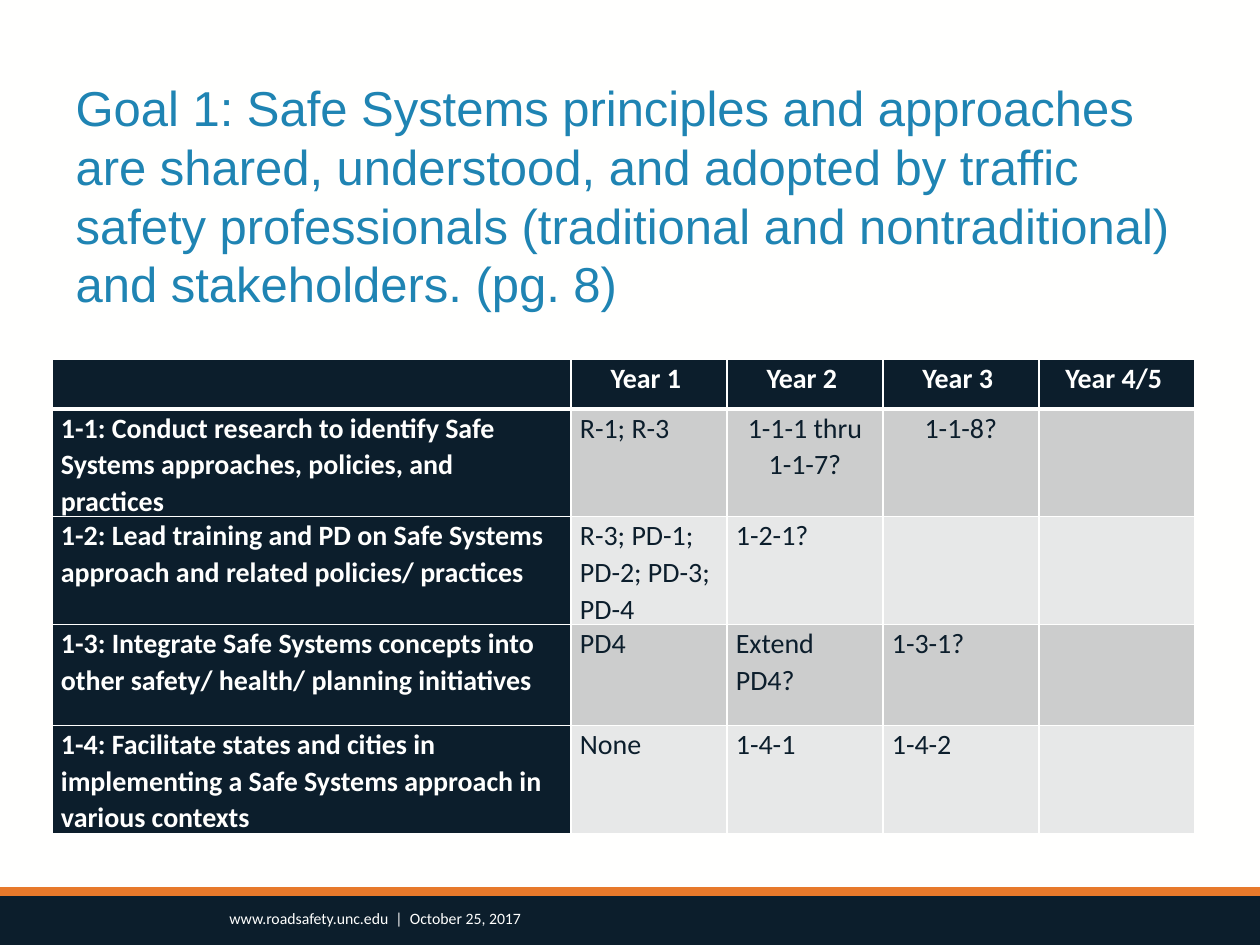
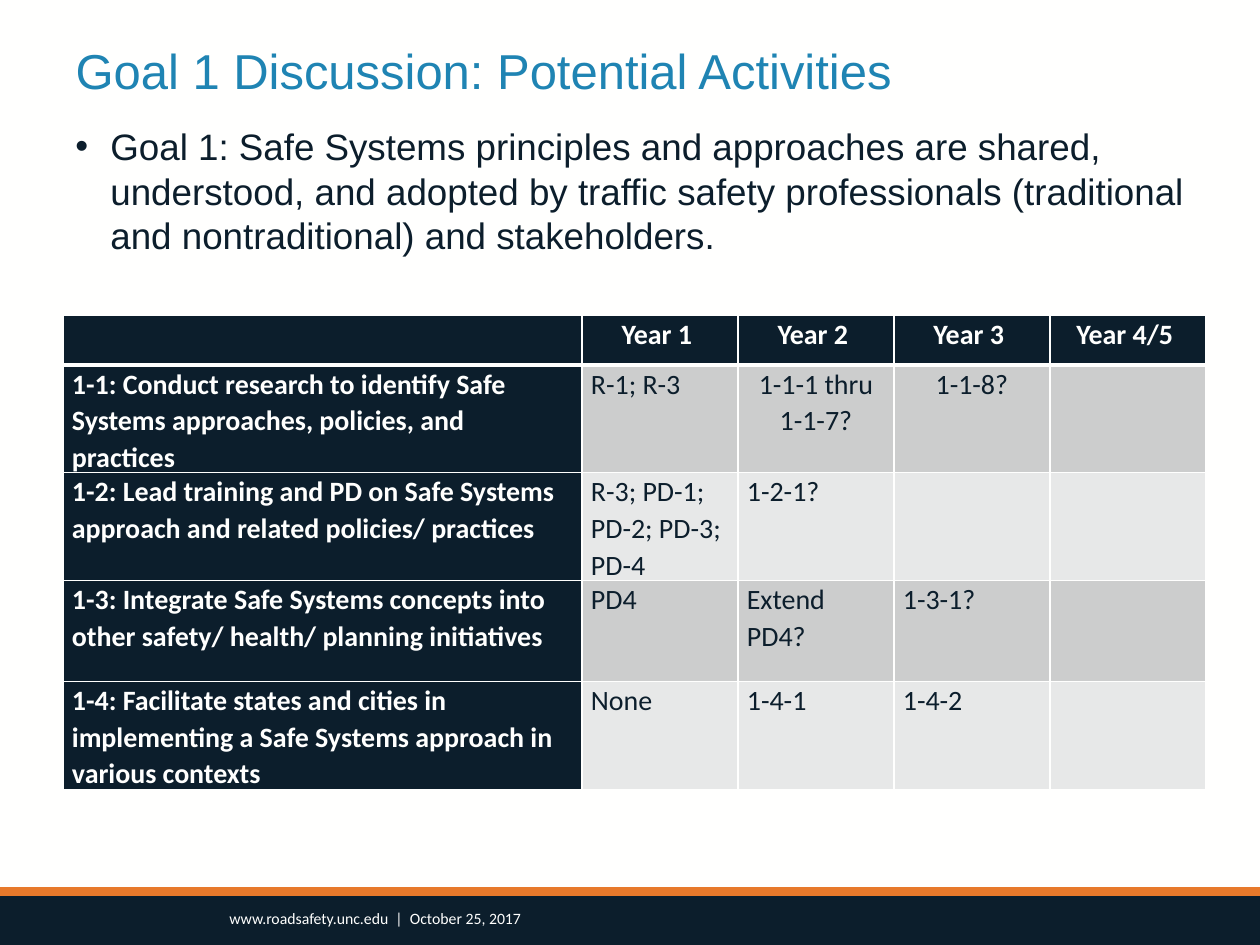
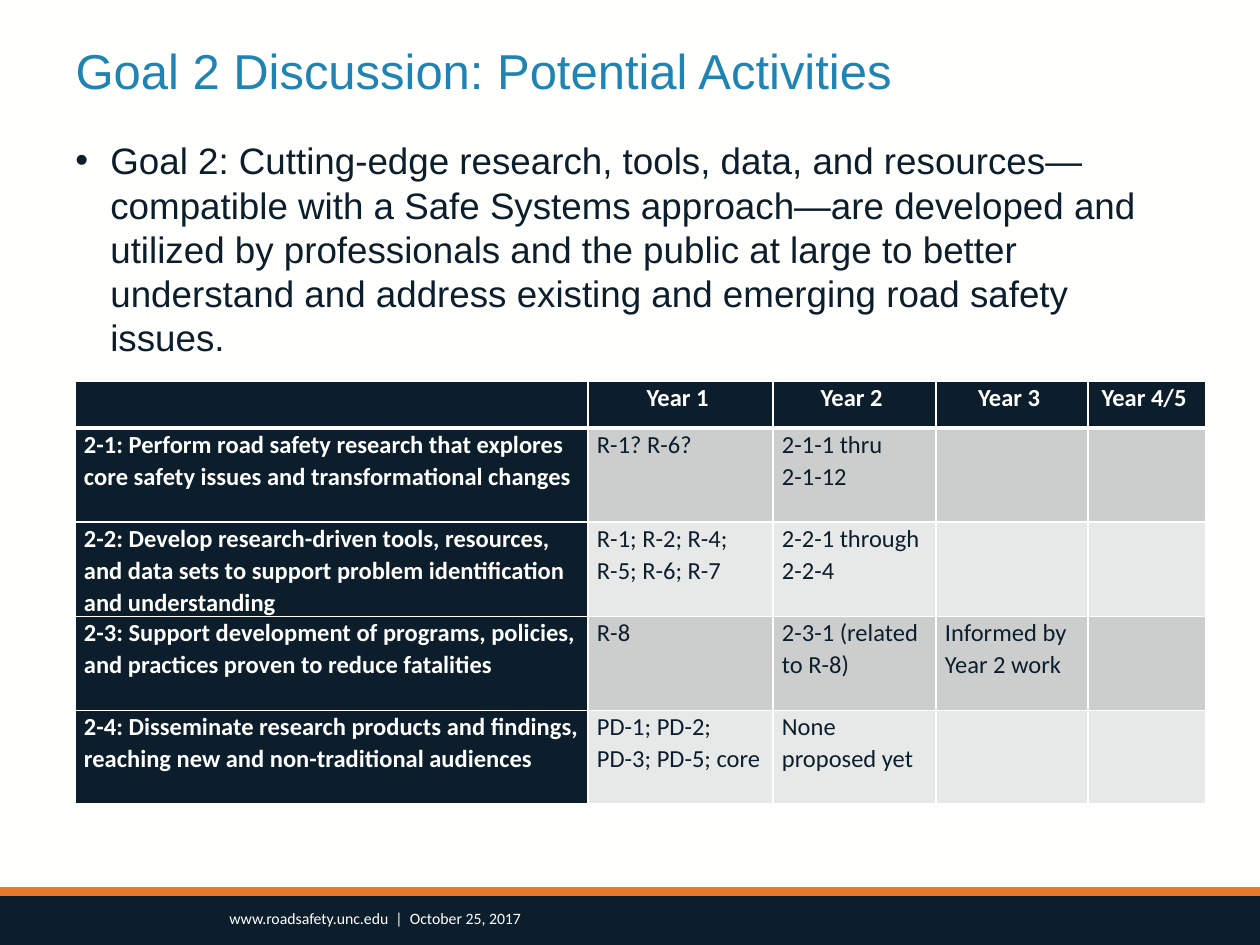
from dataclasses import dataclass
from itertools import product

from lxml.etree import SubElement
from pptx import Presentation
from pptx.dml.color import RGBColor
from pptx.enum.shapes import MSO_SHAPE
from pptx.enum.text import MSO_ANCHOR, MSO_AUTO_SIZE, PP_ALIGN
from pptx.oxml.ns import qn
from pptx.util import Emu, Pt

PX_PER_INCH = 126


# Theme: colours, fonts and type sizes
@dataclass(frozen=True)
class Theme:
    paper: str = "FFFFFE"
    navy: str = "0C1E2C"
    orange: str = "E7792B"
    blue: str = "1F84B3"
    row_shades: tuple = ("CCCDCD", "E7E8E8")
    text_font: str = "Arial"
    table_font: str = "Calibri"
    title_size: int = 28
    body_size: int = 21
    footer_size: int = 9
    cell_spacing: float = 1.07
    thin_border: int = 1
    thick_border: int = 3


THEME = Theme()

# Content
FOOTER = "www.roadsafety.unc.edu  |  October 25, 2017"
GOAL_1 = ("Goal 1: Safe Systems principles and approaches are shared, understood, "
          "and adopted by traffic safety professionals (traditional and "
          "nontraditional) and stakeholders.")
GOAL_2 = ("Goal 2: Cutting-edge research, tools, data, and resources—compatible "
          "with a Safe Systems approach—are developed and utilized by "
          "professionals and the public at large to better understand and address "
          "existing and emerging road safety issues.")
YEARS = ["", "Year 1 ", "Year 2 ", "Year 3 ", "Year 4/5 "]

GOAL_1_TABLE = {
    "columns": [519] + [156] * 4,
    "rows": [50] + [101] * 4,
    "size": 16,
    "centred": {(1, 2), (1, 3)},
    "cells": [
        YEARS,
        ["1-1: Conduct research to identify Safe Systems approaches, policies, and practices",
         "R-1; R-3", "1-1-1 thru 1-1-7?", "1-1-8?", ""],
        ["1-2: Lead training and PD on Safe Systems approach and related policies/ practices",
         "R-3; PD-1; PD-2; PD-3; PD-4", "1-2-1?", "", ""],
        ["1-3: Integrate Safe Systems concepts into other safety/ health/ planning initiatives",
         "PD4", "Extend PD4?", "1-3-1?", ""],
        ["1-4: Facilitate states and cities in implementing a Safe Systems approach in "
         "various contexts",
         "None", "1-4-1", "1-4-2", ""],
    ],
}
GOAL_2_TABLE = {
    "columns": [513, 185, 163, 152, 118],
    "rows": [47] + [94] * 4,
    "size": 14,
    "centred": set(),
    "cells": [
        YEARS,
        ["2-1: Perform road safety research that explores core safety issues and "
         "transformational changes",
         "R-1? R-6?", "2-1-1 thru\n2-1-12", "", ""],
        ["2-2: Develop research-driven tools, resources, and data sets to support "
         "problem identification and understanding",
         "R-1; R-2; R-4; R-5; R-6; R-7", "2-2-1 through 2-2-4", "", ""],
        ["2-3: Support development of programs, policies, and practices proven to "
         "reduce fatalities",
         "R-8", "2-3-1 (related to R-8)", "Informed by Year 2 work", ""],
        ["2-4: Disseminate research products and findings, reaching new and "
         "non-traditional audiences",
         "PD-1; PD-2; PD-3; PD-5; core", "None proposed yet", "", ""],
    ],
}


# Helpers
def px(length):
    return Emu(round(length * 914400 / PX_PER_INCH))


def set_attributes(target, values):
    for name, value in values.items():
        setattr(target, name, value)


def place(shape, left, top, width, height):
    set_attributes(shape, {"left": px(left), "top": px(top),
                           "width": px(width), "height": px(height)})


def paint(fill, colour):
    fill.solid()
    fill.fore_color.rgb = RGBColor.from_string(colour)


def style_font(font, name, size, colour, bold=False):
    set_attributes(font, {"name": name, "size": Pt(size), "bold": bold})
    font.color.rgb = RGBColor.from_string(colour)


# Shared frame: bands and footer
def add_band(slide, top, height, colour):
    band = slide.shapes.add_shape(MSO_SHAPE.RECTANGLE, 0, px(top), px(1260), px(height))
    band.shadow.inherit = False
    paint(band.fill, colour)
    band.line.fill.background()


def add_text_box(slide, box, text, anchor, margins=None):
    shape = slide.shapes.add_textbox(*map(px, box))
    set_attributes(shape.text_frame, {"word_wrap": True, "vertical_anchor": anchor,
                                      "text": text, **(margins or {})})
    return shape.text_frame.paragraphs[0]


def add_footer(slide):
    add_band(slide, 887, 58, THEME.navy)
    add_band(slide, 887, 9, THEME.orange)
    paragraph = add_text_box(slide, (217, 902, 687, 26), FOOTER, MSO_ANCHOR.BOTTOM,
                             {"margin_top": 0, "margin_bottom": 0})
    style_font(paragraph.font, THEME.table_font, THEME.footer_size, THEME.paper)


def add_titled_slide(presentation, title, top=38, height=63):
    slide = presentation.slides.add_slide(presentation.slide_layouts[5])
    shape = slide.shapes.title
    place(shape, 63, top, 1134, height)
    set_attributes(shape.text_frame, {"text": title, "word_wrap": True,
                                      "auto_size": MSO_AUTO_SIZE.NONE,
                                      "vertical_anchor": MSO_ANCHOR.MIDDLE})
    paragraph = shape.text_frame.paragraphs[0]
    paragraph.alignment = PP_ALIGN.LEFT
    style_font(paragraph.font, THEME.text_font, THEME.title_size, THEME.blue)
    add_footer(slide)
    return slide


# Bulleted goal statement
def add_goal(slide, text, top):
    paragraph = add_text_box(slide, (63, top, 1134, 844 - top), text, MSO_ANCHOR.TOP)
    properties = paragraph._p.get_or_add_pPr()
    properties.set("marL", str(px(35)))
    properties.set("indent", str(-px(35)))
    SubElement(properties, qn("a:buFont"), typeface=THEME.text_font)
    SubElement(properties, qn("a:buChar"), char="•")
    style_font(paragraph.font, THEME.text_font, THEME.body_size, THEME.navy)


# Activity table
def add_borders(cell, top, bottom):
    properties = cell._tc.get_or_add_tcPr()
    widths = {"L": THEME.thin_border, "R": THEME.thin_border, "T": top, "B": bottom}
    for side, width in widths.items():
        line = SubElement(properties, qn(f"a:ln{side}"), w=str(Pt(width)))
        fill = SubElement(line, qn("a:solidFill"))
        SubElement(fill, qn("a:srgbClr"), val=THEME.paper)


def format_cell(cell, row, column, text, size, centred):
    is_label = row == 0 or column == 0
    add_borders(cell,
                THEME.thick_border if row == 1 else THEME.thin_border,
                THEME.thick_border if row == 0 else THEME.thin_border)
    paint(cell.fill, THEME.navy if is_label else THEME.row_shades[(row - 1) % 2])
    set_attributes(cell, {"margin_left": px(9), "margin_right": px(9),
                          "margin_top": 0, "margin_bottom": 0, "text": text})
    for paragraph in cell.text_frame.paragraphs:
        set_attributes(paragraph, {"line_spacing": THEME.cell_spacing,
                                   "alignment": PP_ALIGN.CENTER if centred else PP_ALIGN.LEFT})
        style_font(paragraph.font, THEME.table_font, size,
                   THEME.paper if is_label else THEME.navy, is_label)


def add_activity_table(slide, left, top, activities):
    columns, rows = activities["columns"], activities["rows"]
    frame = slide.shapes.add_table(len(rows), len(columns), px(left), px(top),
                                   px(sum(columns)), px(sum(rows)))
    table = frame.table
    set_attributes(table, {"first_row": False, "horz_banding": False})
    for column, width in zip(table.columns, columns):
        column.width = px(width)
    for row, height in zip(table.rows, rows):
        row.height = px(height)
    for row, column in product(range(len(rows)), range(len(columns))):
        format_cell(table.cell(row, column), row, column,
                    activities["cells"][row][column], activities["size"],
                    row == 0 or (row, column) in activities["centred"])


def main():
    presentation = Presentation()
    set_attributes(presentation, {"slide_width": px(1260), "slide_height": px(945)})
    paint(presentation.slide_master.background.fill, THEME.paper)

    # Goal 1 overview
    slide = add_titled_slide(presentation, f"{GOAL_1} (pg. 8)", top=83, height=224)
    add_activity_table(slide, 52, 359, GOAL_1_TABLE)

    # Goal 1 discussion
    slide = add_titled_slide(presentation, "Goal 1 Discussion: Potential Activities")
    add_goal(slide, GOAL_1, 118)
    add_activity_table(slide, 63, 315, GOAL_1_TABLE)

    # Goal 2 discussion
    slide = add_titled_slide(presentation, "Goal 2 Discussion: Potential Activities")
    add_goal(slide, GOAL_2, 132)
    add_activity_table(slide, 75, 381, GOAL_2_TABLE)

    presentation.save("out.pptx")


if __name__ == "__main__":
    main()
